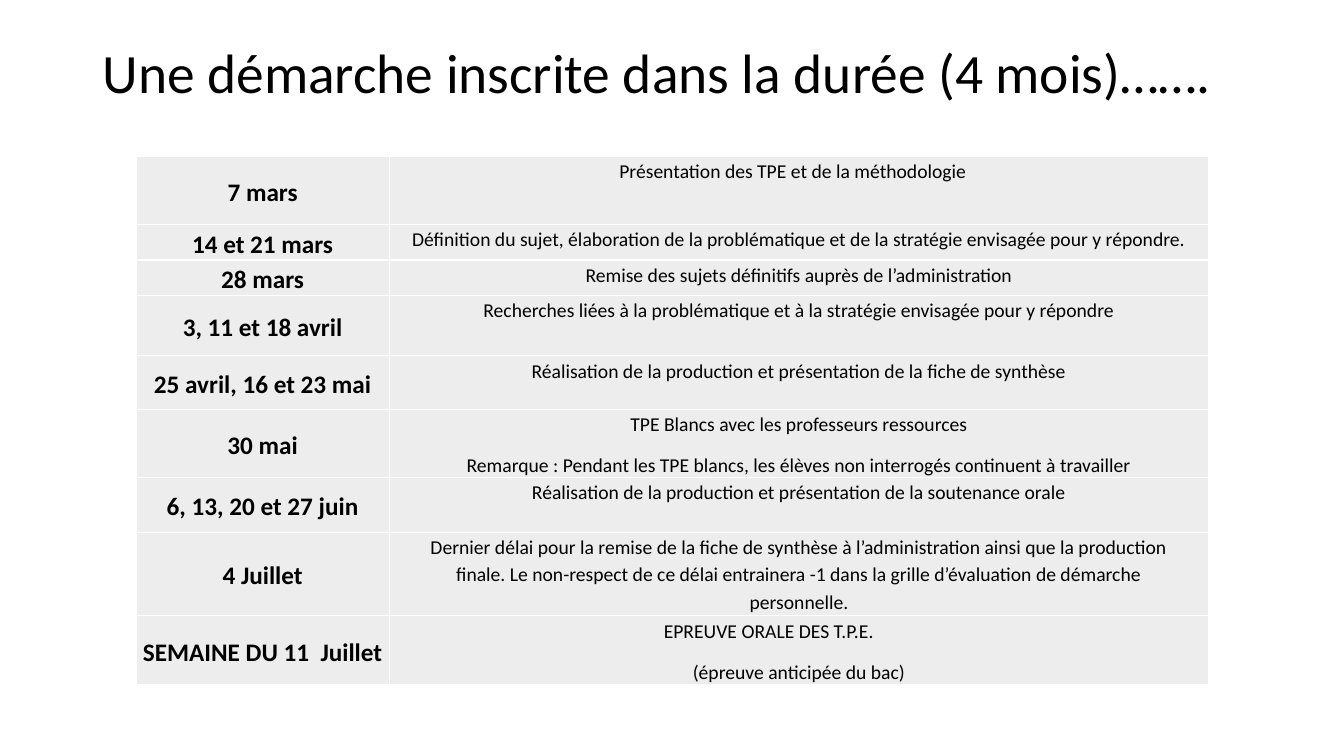
from lxml import etree
from pptx import Presentation
from pptx.dml.color import RGBColor
from pptx.enum.text import MSO_ANCHOR, PP_ALIGN
from pptx.oxml.ns import qn
from pptx.util import Inches, Pt

CENTER, LEFT = PP_ALIGN.CENTER, PP_ALIGN.LEFT
TOP, MIDDLE = MSO_ANCHOR.TOP, MSO_ANCHOR.MIDDLE
BLACK, WHITE, GREY = "000000", "FFFFFF", "EDEDED"


def write(p, text, size, align, spacing, bold=False):
    p.alignment, p.line_spacing = align, spacing
    r = p.add_run()
    r.text = text
    font = {"name": "Calibri", "size": Pt(size), "bold": bold}
    for name, value in font.items():
        setattr(r.font, name, value)
    r.font.color.rgb = RGBColor.from_string(BLACK)


def add_borders(cell, color, width):
    tcPr = cell._tc.get_or_add_tcPr()
    for i, side in enumerate(("lnL", "lnR", "lnT", "lnB")):
        ln = etree.Element(qn(f"a:{side}"), w=str(Pt(width)))
        fill = etree.SubElement(ln, qn("a:solidFill"))
        etree.SubElement(fill, qn("a:srgbClr"), val=color)
        tcPr.insert(i, ln)


prs = Presentation()
prs.slide_width, prs.slide_height = Inches(13.33), Inches(7.5)
s = prs.slides.add_slide(prs.slide_layouts[6])

# Title
tf = s.shapes.add_textbox(Inches(0.92), Inches(0.4), Inches(11.5), Inches(0.7)).text_frame
tf.word_wrap, tf.vertical_anchor = True, MIDDLE
write(tf.paragraphs[0], "Une démarche inscrite dans la durée (4 mois)…….", 39.6, LEFT, 0.9)

# Schedule: row height, dates, then (text, left indent, right indent) per paragraph
IND = 0.12
schedule = [
    (0.68, "7 mars", [("Présentation des TPE et de la méthodologie", 0, IND)]),
    (0.35, "14 et 21 mars", [
        ("Définition du sujet, élaboration de la problématique et de la stratégie "
         "envisagée pour y répondre.", IND, IND)]),
    (0.35, "28 mars", [("Remise des sujets définitifs auprès de l’administration", IND, IND)]),
    (0.6, "3, 11 et 18 avril", [
        ("Recherches liées à la problématique et à la stratégie envisagée pour y répondre",
         IND, IND)]),
    (0.53, "25 avril, 16 et 23 mai", [
        ("Réalisation de la production et présentation de la fiche de synthèse", IND, IND)]),
    (0.68, "30 mai", [
        ("TPE Blancs avec les professeurs ressources", IND, IND),
        ("Remarque : Pendant les TPE blancs, les élèves non interrogés continuent à travailler",
         IND, IND)]),
    (0.54, "6, 13, 20 et 27 juin", [
        ("Réalisation de la production et présentation de la soutenance orale", IND, IND)]),
    (0.83, "4 Juillet", [
        ("Dernier délai pour la remise de la fiche de synthèse à l’administration ainsi que la "
         "production finale. Le non-respect de ce délai entrainera -1 dans la grille "
         "d’évaluation de démarche personnelle.", IND, IND)]),
    (0.68, "SEMAINE DU 11  Juillet", [
        ("EPREUVE ORALE DES T.P.E.", 0, 0.6),
        ("(épreuve anticipée du bac)", IND, IND)]),
]

# Table
table = s.shapes.add_table(len(schedule), 2, Inches(1.35), Inches(1.55),
                           Inches(10.64), Inches(5.24)).table
table.first_row = table.horz_banding = False
for col, width in zip(table.columns, (2.51, 8.13)):
    col.width = Inches(width)

for row, (height, dates, steps) in zip(table.rows, schedule):
    row.height = Inches(height)
    columns = (([(dates, 0, 0)], 18, True, MIDDLE), (steps, 14, False, TOP))
    for cell, (paragraphs, size, bold, anchor) in zip(row.cells, columns):
        cell.fill.solid()
        cell.fill.fore_color.rgb = RGBColor.from_string(GREY)
        add_borders(cell, WHITE, 1)
        cell.vertical_anchor = anchor
        cell.margin_left = cell.margin_right = Inches(0.05)
        cell.margin_top = cell.margin_bottom = 0
        tf = cell.text_frame
        for i, (text, left, right) in enumerate(paragraphs):
            p = tf.add_paragraph() if i else tf.paragraphs[0]
            write(p, text, size, CENTER, 1.15, bold)
            p.space_before = Pt(10)
            pPr = p._p.get_or_add_pPr()
            pPr.set("marL", str(Inches(left)))
            pPr.set("marR", str(Inches(right)))

prs.save("out.pptx")
